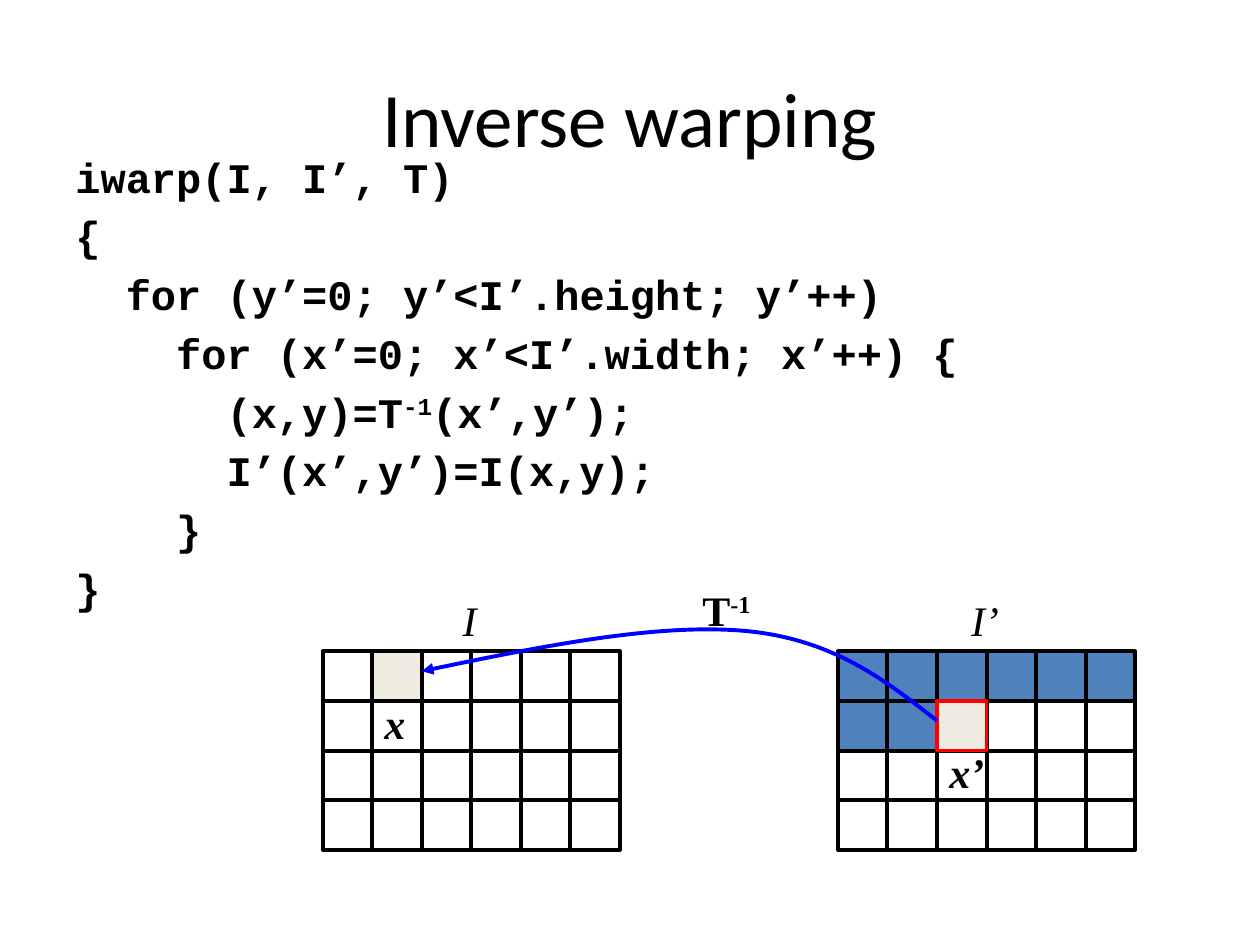
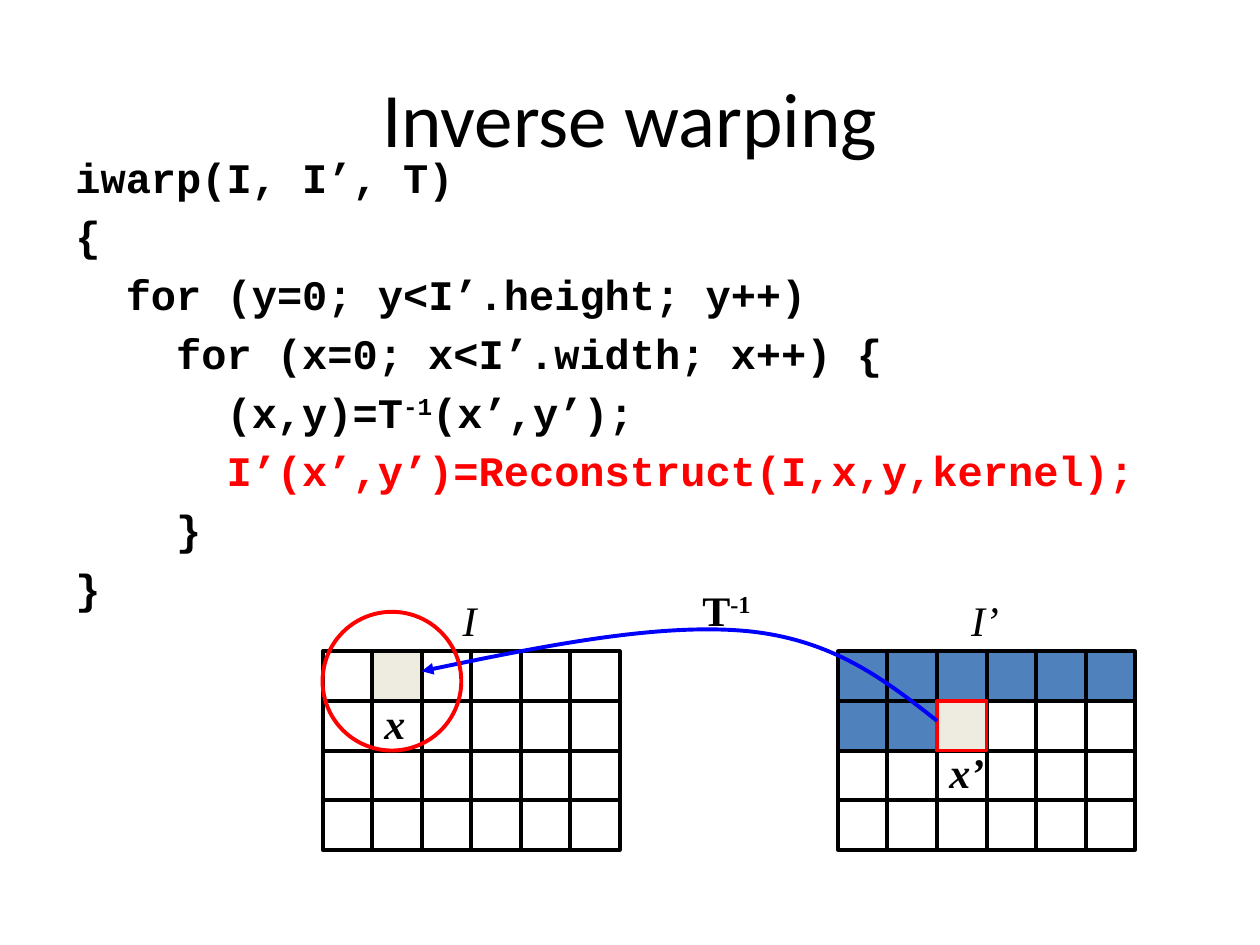
from pptx import Presentation
from pptx.dml.color import RGBColor
from pptx.enum.shapes import MSO_SHAPE as Shape
from pptx.enum.text import MSO_ANCHOR as Anchor, PP_ALIGN as Align
from pptx.oxml import parse_xml
from pptx.oxml.ns import nsdecls, qn
from pptx.util import Inches, Pt

BLACK = RGBColor(0x00, 0x00, 0x00)
RED = RGBColor(0xFF, 0x00, 0x00)
ARROW_BLUE = RGBColor(0x00, 0x00, 0xFF)
WARPED_BLUE = RGBColor(0x4F, 0x81, 0xBD)
PIXEL_BEIGE = RGBColor(0xEE, 0xEC, 0xE1)

WIDTH, HEIGHT = 10, 7.5
TITLE_BOX = (0.05 * WIDTH, 0.04 * HEIGHT, 0.9 * WIDTH, 1.25)
CODE_BOX = (0.05 * WIDTH, 1.15, 0.9 * WIDTH, 3.86)
COLUMNS, ROWS = 6, 4
CELL = 2.36 / COLUMNS
GRID_TOP = 5.17
SOURCE_LEFT, TARGET_LEFT = 2.56, 6.65
LABEL_HEIGHT = 0.5
CODE_INDENT, HANGING = 0.4, 0.38
LINE_WEIGHT = 2.25


def inches(*lengths):
    return [Inches(length) for length in lengths]


def write(slide, box, lines, font="Times New Roman", size=24, bold=False, italic=False,
          align=Align.LEFT, anchor=Anchor.TOP, wrap=True, code=False):
    frame = slide.shapes.add_textbox(*inches(*box)).text_frame
    frame.word_wrap = wrap
    frame.vertical_anchor = anchor
    for index, (level, text, color) in enumerate(lines):
        paragraph = frame.add_paragraph() if index else frame.paragraphs[0]
        paragraph.alignment = align
        if code:
            properties = paragraph._p.get_or_add_pPr()
            properties.set("marL", str(Inches(HANGING + level * CODE_INDENT)))
            properties.set("indent", str(-Inches(HANGING)))
            properties.insert(0, parse_xml(
                f'<a:spcBef {nsdecls("a")}><a:spcPct val="20000"/></a:spcBef>'))
        for part, piece in enumerate(text.split("^")):
            run = paragraph.add_run()
            run.text = piece
            run.font.name = font
            run.font.size = Pt(size)
            run.font.bold = bold
            run.font.italic = italic
            run.font.color.rgb = color
            if part % 2:
                run.font._element.set("baseline", "30000")


def label(slide, text, center, top, width, **style):
    write(slide, (center - width / 2, top, width, LABEL_HEIGHT), [(0, text, BLACK)],
          wrap=False, **style)


def outline(slide, kind, box, line=BLACK, fill=None):
    shape = slide.shapes.add_shape(kind, *inches(*box))
    shape.shadow.inherit = False
    shape.line.color.rgb = line
    shape.line.width = Pt(LINE_WEIGHT)
    if fill is None:
        shape.fill.background()
    else:
        shape.fill.solid()
        shape.fill.fore_color.rgb = fill


def cell_box(left, column, row, span=1):
    return left + column * CELL, GRID_TOP + row * CELL, span * CELL, span * CELL


def pixel_grid(slide, left, name, name_width, fills):
    for row in range(ROWS):
        for column in range(COLUMNS):
            outline(slide, Shape.RECTANGLE, cell_box(left, column, row),
                    fill=fills.get((column, row)))
    label(slide, name, left + 2.97 * CELL, GRID_TOP - LABEL_HEIGHT, name_width, italic=True)


def pixel_label(slide, name, left, column, row, width):
    x, y, _, _ = cell_box(left, column, row)
    label(slide, name, x + width / 2, y + 0.8 * CELL, width, bold=True, italic=True)


def inverse_arrow(slide, start, end):
    (x0, y0), (x1, y1) = start, end
    run = x0 - x1
    shares = [(0.1, -0.32), (0.2, -0.64), (0.365, -0.71), (0.535, -0.78), (0.77, -0.59)]
    points = [(x0 - across * run, y0 + rise) for across, rise in shares] + [end]
    builder = slide.shapes.build_freeform(Inches(x0), Inches(y0), scale=1.0)
    builder.add_line_segments([inches(*point) for point in points], close=False)
    curve = builder.convert_to_shape()
    curve.shadow.inherit = False
    curve.fill.background()
    curve.line.color.rgb = ARROW_BLUE
    curve.line.width = Pt(LINE_WEIGHT)
    curve.line._get_or_add_ln().append(
        parse_xml(f'<a:tailEnd {nsdecls("a")} type="triangle"/>'))
    segments = list(curve._element.iter(qn("a:lnTo")))
    for first in range(0, len(segments), 3):
        bezier = parse_xml(f'<a:cubicBezTo {nsdecls("a")}/>')
        segments[first].addprevious(bezier)
        for segment in segments[first:first + 3]:
            bezier.append(segment[0])
            segment.getparent().remove(segment)


def warp_diagram(slide, kernel):
    pixel_grid(slide, SOURCE_LEFT, "I", 0.31, {(1, 0): PIXEL_BEIGE})
    warped = [(column, 0) for column in range(COLUMNS)] + [(0, 1), (1, 1)]
    pixel_grid(slide, TARGET_LEFT, "I’", 0.42, dict.fromkeys(warped, WARPED_BLUE))
    pixel_label(slide, "x", SOURCE_LEFT, 1, 0, 0.37)
    pixel_label(slide, "x’", TARGET_LEFT, 2, 1, 0.48)
    label(slide, "T^-1", 5.78, 4.59, 0.61, bold=True)
    target = cell_box(TARGET_LEFT, 2, 1)
    outline(slide, Shape.RECTANGLE, target, line=RED, fill=PIXEL_BEIGE)
    source_x, source_y, _, _ = cell_box(SOURCE_LEFT, 2, 0)
    inverse_arrow(slide, (target[0], target[1] + 0.4 * CELL),
                  (source_x, source_y + 0.4 * CELL))
    if kernel:
        outline(slide, Shape.OVAL, cell_box(SOURCE_LEFT, 0, -0.8, span=2.8), line=RED)


def warping_slide(deck, x, y, assignment, color, kernel):
    slide = deck.slides.add_slide(deck.slide_layouts[6])
    write(slide, TITLE_BOX, [(0, "Inverse warping", BLACK)], font="Calibri", size=44,
          align=Align.CENTER, anchor=Anchor.MIDDLE)
    write(slide, CODE_BOX, [
        (0, "iwarp(I, I’, T)", BLACK),
        (0, "{", BLACK),
        (1, f"for ({y}=0; {y}<I’.height; {y}++)", BLACK),
        (2, f"for ({x}=0; {x}<I’.width; {x}++) {{", BLACK),
        (3, "(x,y)=T^-1^(x’,y’);", BLACK),
        (3, f"I’(x’,y’)={assignment};", color),
        (2, "}", BLACK),
        (0, "}", BLACK),
    ], font="Courier New", bold=True, code=True)
    warp_diagram(slide, kernel)


def main():
    deck = Presentation()
    deck.slide_width, deck.slide_height = inches(WIDTH, HEIGHT)
    warping_slide(deck, "x’", "y’", "I(x,y)", BLACK, kernel=False)
    warping_slide(deck, "x", "y", "Reconstruct(I,x,y,kernel)", RED, kernel=True)
    deck.save("out.pptx")


if __name__ == "__main__":
    main()
